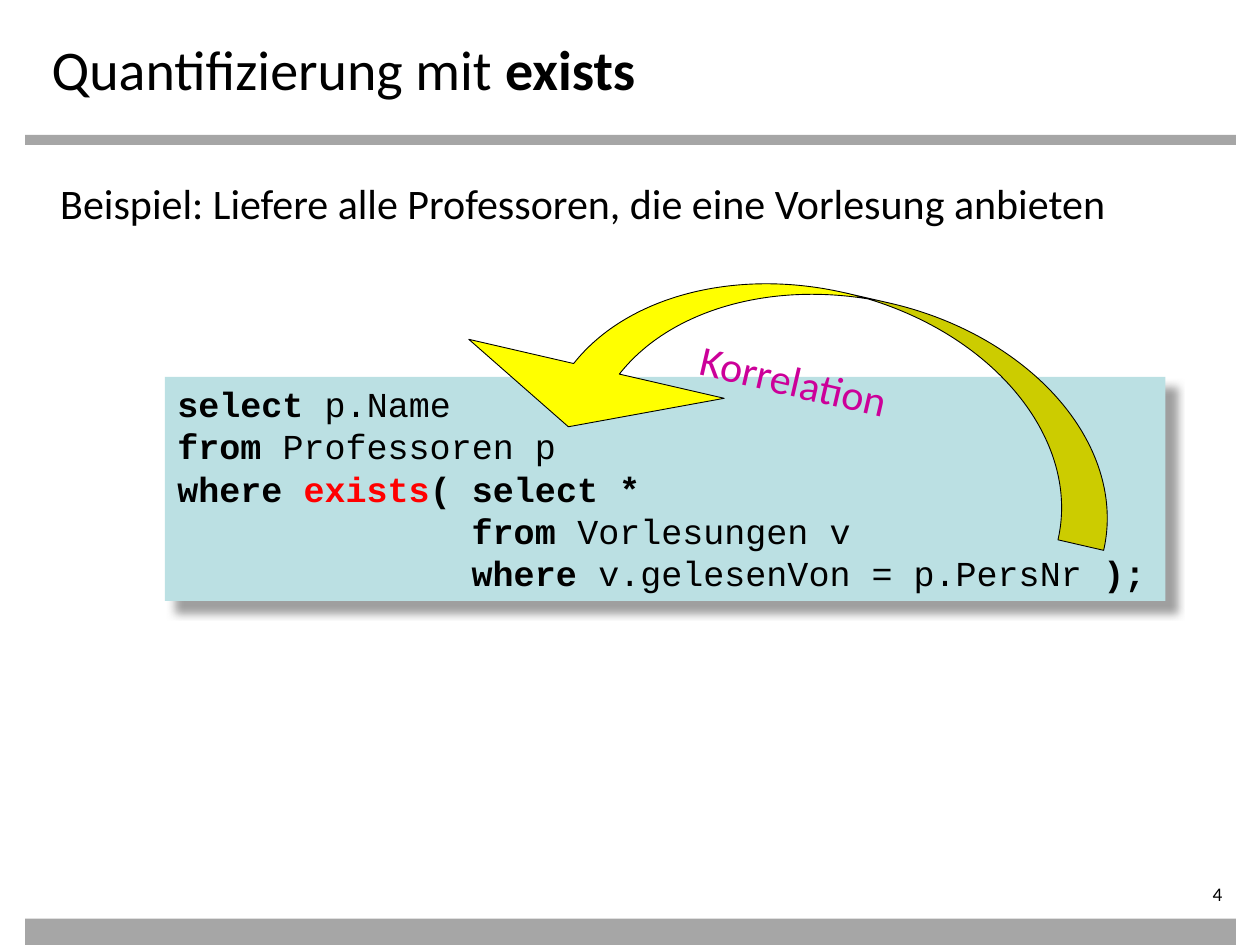
from typing import NamedTuple

from lxml import etree
from pptx import Presentation
from pptx.dml.color import RGBColor
from pptx.enum.shapes import MSO_SHAPE
from pptx.enum.text import MSO_ANCHOR, MSO_AUTO_SIZE, PP_ALIGN
from pptx.oxml.ns import qn
from pptx.util import Inches, Pt

RECT, ARROW = MSO_SHAPE.RECTANGLE, MSO_SHAPE.CURVED_UP_ARROW
TOP, MIDDLE = MSO_ANCHOR.TOP, MSO_ANCHOR.MIDDLE
LEFT, CENTER, RIGHT = PP_ALIGN.LEFT, PP_ALIGN.CENTER, PP_ALIGN.RIGHT
FIXED = MSO_AUTO_SIZE.NONE

BLACK = RGBColor(0x00, 0x00, 0x00)
GREY = RGBColor(0xA6, 0xA6, 0xA6)
SHADE = RGBColor(0x80, 0x80, 0x80)
TEAL = RGBColor(0xBB, 0xE0, 0xE3)
YELLOW = RGBColor(0xFF, 0xFF, 0x00)
RED = RGBColor(0xFF, 0x00, 0x00)
PINK = RGBColor(0xCC, 0x00, 0x99)
SANS, MONO = "Calibri", "Courier New"

WIDTH, HEIGHT = Inches(10), Inches(7.5)
COL, ROW = WIDTH / 10, HEIGHT / 7.5  # square grid cells


class Box(NamedTuple):
    """A place on the grid, in columns and rows."""
    x: float
    y: float
    w: float
    h: float

    def size(self) -> tuple:
        return (round(self.x * COL), round(self.y * ROW),
                round(self.w * COL), round(self.h * ROW))


class Part(NamedTuple):
    """A stretch of text in one style."""
    text: str
    bold: bool = False
    color: RGBColor = BLACK


def write(shape, lines: list, size: float, face: str = SANS,
          align=LEFT, anchor=TOP, wrap: bool = True) -> None:
    frame = shape.text_frame
    frame.auto_size, frame.word_wrap = FIXED, wrap
    frame.vertical_anchor = anchor
    for i, parts in enumerate(lines):
        para = frame.add_paragraph() if i else frame.paragraphs[0]
        para.alignment = align
        para.font.size, para.font.name = Pt(size), face
        for part in parts:
            run = para.add_run()
            run.text = part.text
            run.font.bold = part.bold
            run.font.color.rgb = part.color


def draw(slide, kind, box: Box, fill: RGBColor):
    shape = slide.shapes.add_shape(kind, *box.size())
    shape.shadow.inherit = False
    shape.fill.solid()
    shape.fill.fore_color.rgb = fill
    shape.line.fill.background()
    return shape


def label(slide, box: Box):
    return slide.shapes.add_textbox(*box.size())


def shade(shape) -> None:
    """Cast a soft shadow to the lower right."""
    effects = shape._element.spPr.find(qn("a:effectLst"))
    outer = etree.SubElement(
        effects, qn("a:outerShdw"), blurRad=str(Pt(5)), dist=str(Pt(8.5)),
        dir="2700000", algn="tl", rotWithShape="0")
    color = etree.SubElement(outer, qn("a:srgbClr"), val=str(SHADE))
    etree.SubElement(color, qn("a:alpha"), val="75000")


def main() -> None:
    deck = Presentation()
    deck.slide_width, deck.slide_height = WIDTH, HEIGHT
    slide = deck.slides.add_slide(deck.slide_layouts[5])

    # Bars under the title and at the foot
    for y, h in ((1.07, 0.08), (7.29, 0.21)):
        draw(slide, RECT, Box(0.2, y, 9.61, h), GREY)

    # Title and task
    title = slide.shapes.title
    title.left, title.top, title.width, title.height = Box(
        0.31, 0.22, 9.69, 0.55).size()
    write(title, [[Part("Quantifizierung mit "), Part("exists", True)]], 32)
    task = label(slide, Box(0.38, 1.36, 8.74, 0.5))
    write(task, [[Part("Beispiel: Liefere alle Professoren, "
                       "die eine Vorlesung anbieten")]], 24)

    # Query
    query = draw(slide, RECT, Box(1.31, 2.99, 7.94, 1.78), TEAL)
    shade(query)
    write(query, [
        [Part("select ", True), Part("p.Name")],
        [Part("from ", True), Part("Professoren p")],
        [Part("where ", True), Part("exists", True, RED),
         Part("( select *", True)],
        [Part("              from ", True), Part("Vorlesungen v")],
        [Part("              where ", True), Part("v.gelesenVon = p.PersNr"),
         Part(" );", True)],
    ], 20, MONO)

    # Arrow from the inner query to the outer one; its text is turned upright
    arrow = draw(slide, ARROW, Box(3.6, 2.25, 5.4, 1.53), YELLOW)
    arrow.rotation = 193
    for i, value in enumerate((0.243, 1.36, 0.326)):
        arrow.adjustments[i] = value
    arrow.line.color.rgb, arrow.line.width = BLACK, Pt(0.5)
    write(arrow, [[Part("Korrelation", color=PINK)]], 24,
          align=CENTER, anchor=MIDDLE, wrap=False)
    arrow.text_frame._txBody.bodyPr.set("rot", "10800000")

    # Page number
    page = label(slide, Box(8.7, 7, 1.1, 0.22))
    frame = page.text_frame
    frame.margin_left = frame.margin_top = frame.margin_bottom = 0
    write(page, [[Part("4")]], 11, align=RIGHT)

    deck.save("out.pptx")


if __name__ == "__main__":
    main()
